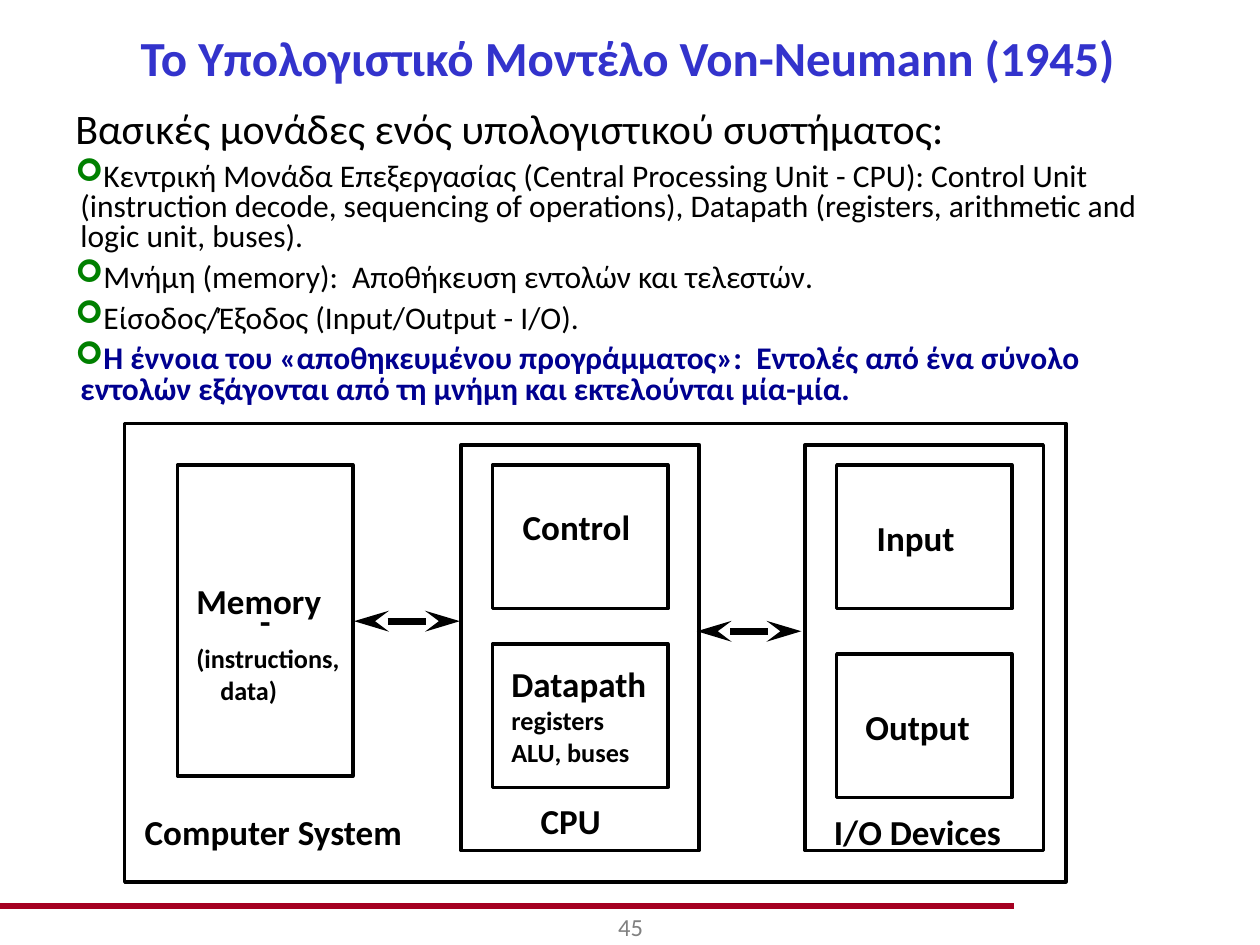
from dataclasses import dataclass

from lxml import etree
from pptx import Presentation
from pptx.dml.color import RGBColor
from pptx.enum.shapes import MSO_CONNECTOR, MSO_SHAPE
from pptx.enum.text import MSO_ANCHOR, MSO_AUTO_SIZE, PP_ALIGN
from pptx.oxml.ns import qn
from pptx.util import Emu, Inches, Pt

RECTANGLE, STRAIGHT = MSO_SHAPE.RECTANGLE, MSO_CONNECTOR.STRAIGHT
CENTER, MIDDLE = PP_ALIGN.CENTER, MSO_ANCHOR.MIDDLE
FIT_TEXT = MSO_AUTO_SIZE.SHAPE_TO_FIT_TEXT
COLUMNS, ROWS = 40, 30


@dataclass(frozen=True)
class Theme:
    font: str = "Calibri"
    ink: str = "000000"
    title: str = "3333CC"
    emphasis: str = "000090"
    bullet: str = "008000"
    rule: str = "A50021"
    page: str = "808080"
    title_size: int = 28
    lead_size: int = 24
    label_size: int = 20
    body_size: int = 18
    detail_size: int = 15
    page_size: int = 14


@dataclass(frozen=True)
class Area:
    """A place on the grid, in columns and rows."""
    column: float
    row: float
    columns: float
    rows: float


@dataclass(frozen=True)
class Line:
    text: str
    size: int
    color: str = "000000"
    bold: bool = True
    before: int = 0
    indent: float = 0


@dataclass(frozen=True)
class Label:
    area: Area
    lines: tuple[Line, ...]


THEME = Theme()
prs = Presentation()
prs.slide_width, prs.slide_height = Inches(10), Inches(7.5)
slide = prs.slides.add_slide(prs.slide_layouts[6])


def x(columns: float) -> Emu:
    return Emu(round(prs.slide_width * columns / COLUMNS))


def y(rows: float) -> Emu:
    return Emu(round(prs.slide_height * rows / ROWS))


def place(area: Area) -> tuple[Emu, Emu, Emu, Emu]:
    return x(area.column), y(area.row), x(area.columns), y(area.rows)


def write(paragraph, line: Line) -> None:
    paragraph.add_run().text = line.text
    if line.before:
        paragraph.space_before = Pt(line.before)
    font = paragraph.font
    font.name, font.size, font.bold = THEME.font, Pt(line.size), line.bold
    font.color.rgb = RGBColor.from_string(line.color)


def set_indent(paragraph, left: float, first: float = 0) -> None:
    properties = paragraph._p.get_or_add_pPr()
    properties.set("marL", str(Inches(left)))
    properties.set("indent", str(Inches(first)))


def add_bullet(paragraph) -> None:
    properties = paragraph._p.get_or_add_pPr()
    color = etree.SubElement(properties, qn("a:buClr"))
    etree.SubElement(color, qn("a:srgbClr"), val=THEME.bullet)
    etree.SubElement(properties, qn("a:buFont"), typeface="Wingdings")
    etree.SubElement(properties, qn("a:buChar"), char="➢")


def paragraphs(frame, count: int) -> list:
    return [frame.paragraphs[0]] + [frame.add_paragraph() for _ in range(count - 1)]


def add_heading(area: Area, line: Line, anchor=MSO_ANCHOR.TOP) -> None:
    """Add one centred line of text."""
    frame = slide.shapes.add_textbox(*place(area)).text_frame
    frame.word_wrap, frame.vertical_anchor = True, anchor
    frame.paragraphs[0].alignment = CENTER
    write(frame.paragraphs[0], line)


def add_body(area: Area, lines: list[Line]) -> None:
    """Add a lead line followed by bulleted lines."""
    frame = slide.shapes.add_textbox(*place(area)).text_frame
    frame.word_wrap = True
    for index, (paragraph, line) in enumerate(zip(paragraphs(frame, len(lines)), lines)):
        set_indent(paragraph, 0.04, -0.19 if index else -0.21)
        paragraph.line_spacing = 0.8
        if index:
            paragraph.space_before = Pt(6)
            add_bullet(paragraph)
        write(paragraph, line)


def add_box(area: Area):
    box = slide.shapes.add_shape(RECTANGLE, *place(area))
    box.shadow.inherit = False
    box.fill.background()
    box.line.color.rgb = RGBColor.from_string(THEME.ink)
    box.line.width = Pt(2)
    return box


def add_label(label: Label) -> None:
    frame = slide.shapes.add_textbox(*place(label.area)).text_frame
    frame.word_wrap, frame.auto_size = False, FIT_TEXT
    for paragraph, line in zip(paragraphs(frame, len(label.lines)), label.lines):
        if line.indent:
            set_indent(paragraph, line.indent)
        write(paragraph, line)


def add_rule(start: float, end: float, row: float, color: str, width: int,
             arrows: bool = False) -> None:
    """Add a horizontal line, with arrowheads at both ends if asked."""
    rule = slide.shapes.add_connector(STRAIGHT, x(start), y(row), x(end), y(row))
    rule.line.color.rgb = RGBColor.from_string(color)
    rule.line.width = Pt(width)
    if arrows:
        for end_tag in ("a:headEnd", "a:tailEnd"):
            etree.SubElement(rule.line._get_or_add_ln(), qn(end_tag),
                             type="stealth", w="med", len="lg")
    etree.SubElement(rule._element.spPr, qn("a:effectLst"))


def name(text: str) -> Line:
    return Line(text, THEME.label_size)


def detail(text: str, before: int = 0, indent: float = 0) -> Line:
    return Line(text, THEME.detail_size, before=before, indent=indent)


def point(text: str, color: str = THEME.ink, bold: bool = False) -> Line:
    return Line(text, THEME.body_size, color, bold)


BODY = [
    Line("Βασικές μονάδες ενός υπολογιστικού συστήματος:", THEME.lead_size, bold=False),
    point("Κεντρική Μονάδα Επεξεργασίας (Central Processing Unit - CPU): Control Unit "
          "(instruction decode, sequencing of operations), Datapath (registers, "
          "arithmetic and logic unit, buses)."),
    point("Μνήμη (memory):  Αποθήκευση εντολών και τελεστών."),
    point("Είσοδος/Έξοδος (Input/Output - I/O)."),
    point("Η έννοια του «αποθηκευμένου προγράμματος»:  Εντολές από ένα σύνολο εντολών "
          "εξάγονται από τη μνήμη και εκτελούνται μία-μία.", THEME.emphasis, True),
]
SYSTEM = Area(3.96, 13.44, 29.88, 14.56)
MEMORY = Area(5.64, 14.76, 5.56, 9.88)
GROUPS = [Area(column, 14.12, 7.56, 12.88) for column in (14.64, 25.56)]
UNITS = [Area(group.column + 1, row, 5.56, 4.56)
         for group, lower in zip(GROUPS, (20.44, 20.76)) for row in (14.76, lower)]
LABELS = [
    Label(Area(5.84, 18.2, 5.4, 4.44),
          (name("Memory"), detail("(instructions,", before=12), detail("data)", indent=0.19))),
    Label(Area(16.2, 15.84, 4.24, 1.76), (name("Control"),)),
    Label(Area(15.84, 20.84, 5.12, 3.76),
          (name("Datapath"), detail("registers"), detail("ALU, buses"))),
    Label(Area(16.77, 25.2, 2.75, 1.76), (name("CPU"),)),
    Label(Area(4.2, 25.52, 9.04, 1.76), (name("Computer System"),)),
    Label(Area(27.44, 16.2, 3.32, 1.76), (name("Input"),)),
    Label(Area(27.08, 22.2, 4.16, 1.76), (name("Output"),)),
    Label(Area(26.08, 25.52, 6.16, 1.76), (name("I/O Devices"),)),
]
BUSES = [(11.24, 14.6, 19.72), (22.12, 25.44, 20.04)]

add_rule(0, 32.2, 28.76, THEME.rule, 3)
add_heading(Area(18.76, 28.76, 2.52, 1.24), Line("45", THEME.page_size, THEME.page, False))
add_heading(Area(-0.16, 0.52, 40.16, 2.6),
            Line("Το Υπολογιστικό Μοντέλο Von-Neumann (1945)", THEME.title_size, THEME.title),
            MIDDLE)
add_body(Area(2, 3.36, 36, 9.76), BODY)
for area in (SYSTEM, *GROUPS, *UNITS):
    add_box(area)
memory = add_box(MEMORY).text_frame
memory.word_wrap, memory.vertical_anchor = False, MIDDLE
memory.paragraphs[0].alignment = CENTER
write(memory.paragraphs[0], name("-"))
for label in LABELS:
    add_label(label)
for start, end, row in BUSES:
    add_rule(start, end, row, THEME.ink, 4, arrows=True)

prs.save("out.pptx")
